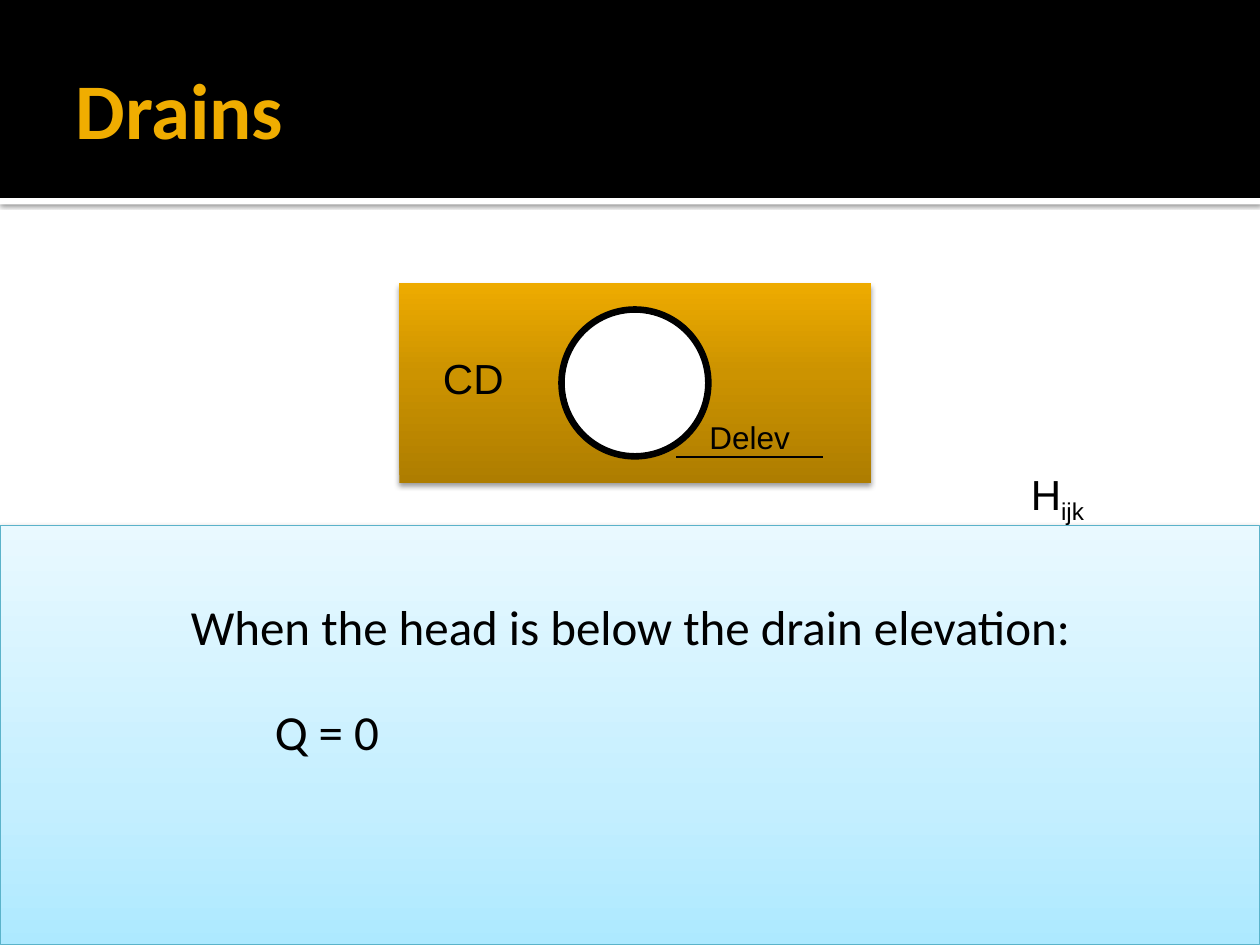
from copy import deepcopy
from dataclasses import dataclass

from lxml import etree
from pptx import Presentation
from pptx.dml.color import RGBColor
from pptx.enum.shapes import MSO_CONNECTOR, MSO_SHAPE
from pptx.enum.text import MSO_ANCHOR, MSO_AUTO_SIZE, PP_ALIGN
from pptx.oxml.ns import qn
from pptx.util import Cm, Pt

RECTANGLE = MSO_SHAPE.RECTANGLE
OVAL = MSO_SHAPE.OVAL
STRAIGHT = MSO_CONNECTOR.STRAIGHT
MIDDLE = MSO_ANCHOR.MIDDLE
LEFT = PP_ALIGN.LEFT
NO_FIT = MSO_AUTO_SIZE.NONE
GROW = MSO_AUTO_SIZE.SHAPE_TO_FIT_TEXT
TITLE_ONLY = 5
PAGE_WIDTH, PAGE_HEIGHT = 25.4, 19.05
HEADER_HEIGHT = 3.99
WATER_TOP = 10.59
BLACK, WHITE, GOLD = "000000", "FFFFFF", "F0AD00"


@dataclass
class Shadow:
    alpha: int
    blur: float
    distance: float


@dataclass
class Block:
    left: float
    top: float
    width: float
    height: float
    fill: str | list[tuple[float, str]]
    kind: int = RECTANGLE
    line: str | None = None
    line_width: float = 0
    shadow: Shadow | None = None


@dataclass
class Label:
    text: str
    left: float
    top: float
    width: float
    height: float
    size: float
    font: str = "Arial"
    subscript: str = ""
    wrap: bool = False


HEADER = [
    Block(0, HEADER_HEIGHT, PAGE_WIDTH, 0.13, WHITE, shadow=Shadow(60, 2.5, 0.8)),
    Block(0, 0, PAGE_WIDTH, HEADER_HEIGHT, BLACK),
    Block(0, WATER_TOP, PAGE_WIDTH, PAGE_HEIGHT - WATER_TOP,
          [(0, "ADE9FF"), (0.35, "C5EFFF"), (1, "E9F9FF")],
          line="5BB3CA", line_width=0.5, shadow=Shadow(38, 3.5, 2)),
]
DRAIN = [
    Block(8.05, 5.71, 9.52, 4.02,
          [(0, "AE7D00"), (0.55, "CC9300"), (1, "EEAB00")],
          shadow=Shadow(38, 3.1, 2)),
    Block(11.32, 6.24, 2.96, 2.96, WHITE, OVAL, BLACK, 3.78),
]
LABELS = [
    Label("H", 20.53, 9.31, 1.68, 1.28, 24, subscript="ijk"),
    Label("CD", 8.68, 6.99, 1.75, 1.28, 24),
    Label("Delev", 14.05, 8.31, 2.15, 1.02, 18),
    Label("Q = 0", 5.29, 14.02, 17.35, 1.45, 28, "Calibri", wrap=True),
    Label("When the head is below the drain elevation:",
          3.6, 11.91, 18.62, 1.45, 28, "Calibri", wrap=True),
]


def color(value: str) -> RGBColor:
    return RGBColor.from_string(value)


def add_span(para, text: str, *, size: float, font: str, fill: str = BLACK,
             bold: bool = False, baseline: int = 0) -> None:
    span = para.add_run()
    span.text = text
    span.font.size = Pt(size)
    span.font.name = font
    span.font.bold = bold
    span.font.color.rgb = color(fill)
    if baseline:
        span.font._element.set("baseline", str(baseline * 1000))


def fill_gradient(shape, stops: list[tuple[float, str]]) -> None:
    shape.fill.gradient()
    shape.fill.gradient_angle = 90
    stop_list = shape._element.spPr.find(qn("a:gradFill")).find(qn("a:gsLst"))
    for _ in range(len(stops) - len(stop_list)):
        stop_list.append(deepcopy(stop_list[0]))
    for stop, (position, value) in zip(shape.fill.gradient_stops, stops):
        stop.position = position
        stop.color.rgb = color(value)


def add_shadow(shape, shadow: Shadow) -> None:
    effects = shape._element.spPr.find(qn("a:effectLst"))
    outer = etree.SubElement(
        effects, qn("a:outerShdw"), blurRad=str(Pt(shadow.blur)),
        dist=str(Pt(shadow.distance)), dir="5400000", rotWithShape="0")
    tint = etree.SubElement(outer, qn("a:srgbClr"), val=BLACK)
    etree.SubElement(tint, qn("a:alpha"), val=str(shadow.alpha * 1000))


def add_block(page, block: Block) -> None:
    shape = page.shapes.add_shape(block.kind, Cm(block.left), Cm(block.top),
                                  Cm(block.width), Cm(block.height))
    shape.shadow.inherit = False
    if isinstance(block.fill, str):
        shape.fill.solid()
        shape.fill.fore_color.rgb = color(block.fill)
    else:
        fill_gradient(shape, block.fill)
    if block.line:
        shape.line.color.rgb = color(block.line)
        shape.line.width = Pt(block.line_width)
    else:
        shape.line.fill.background()
    if block.shadow:
        add_shadow(shape, block.shadow)


def add_label(page, label: Label) -> None:
    box = page.shapes.add_textbox(Cm(label.left), Cm(label.top),
                                  Cm(label.width), Cm(label.height))
    frame = box.text_frame
    frame.word_wrap = label.wrap
    frame.auto_size = GROW
    para = frame.paragraphs[0]
    add_span(para, label.text, size=label.size, font=label.font)
    if label.subscript:
        add_span(para, label.subscript, size=label.size, font=label.font, baseline=-25)


def format_title(page, text: str) -> None:
    title = page.shapes.title
    page.shapes._spTree.append(title._element)
    title.left, title.top, title.width, title.height = (
        Cm(1.27), Cm(0.43), Cm(22.86), Cm(3.48))
    frame = title.text_frame
    frame.vertical_anchor = MIDDLE
    frame.auto_size = NO_FIT
    frame.margin_left = Cm(0.25)
    frame.margin_right = frame.margin_top = frame.margin_bottom = Cm(0.13)
    para = frame.paragraphs[0]
    para.alignment = LEFT
    add_span(para, text, size=45, font="Calibri", fill=GOLD, bold=True)


def add_level_line(page, left: float, right: float, top: float) -> None:
    line = page.shapes.add_connector(STRAIGHT, Cm(left), Cm(top), Cm(right), Cm(top))
    line.line.color.rgb = color(BLACK)
    line.line.width = Pt(1.5)
    etree.SubElement(line._element.spPr, qn("a:effectLst"))


def main() -> None:
    deck = Presentation()
    deck.slide_width, deck.slide_height = Cm(PAGE_WIDTH), Cm(PAGE_HEIGHT)
    page = deck.slides.add_slide(deck.slide_layouts[TITLE_ONLY])
    for block in HEADER:
        add_block(page, block)
    format_title(page, "Drains")
    for block in DRAIN:
        add_block(page, block)
    add_level_line(page, 13.63, 16.59, 9.21)
    for label in LABELS:
        add_label(page, label)
    deck.save("out.pptx")


if __name__ == "__main__":
    main()
